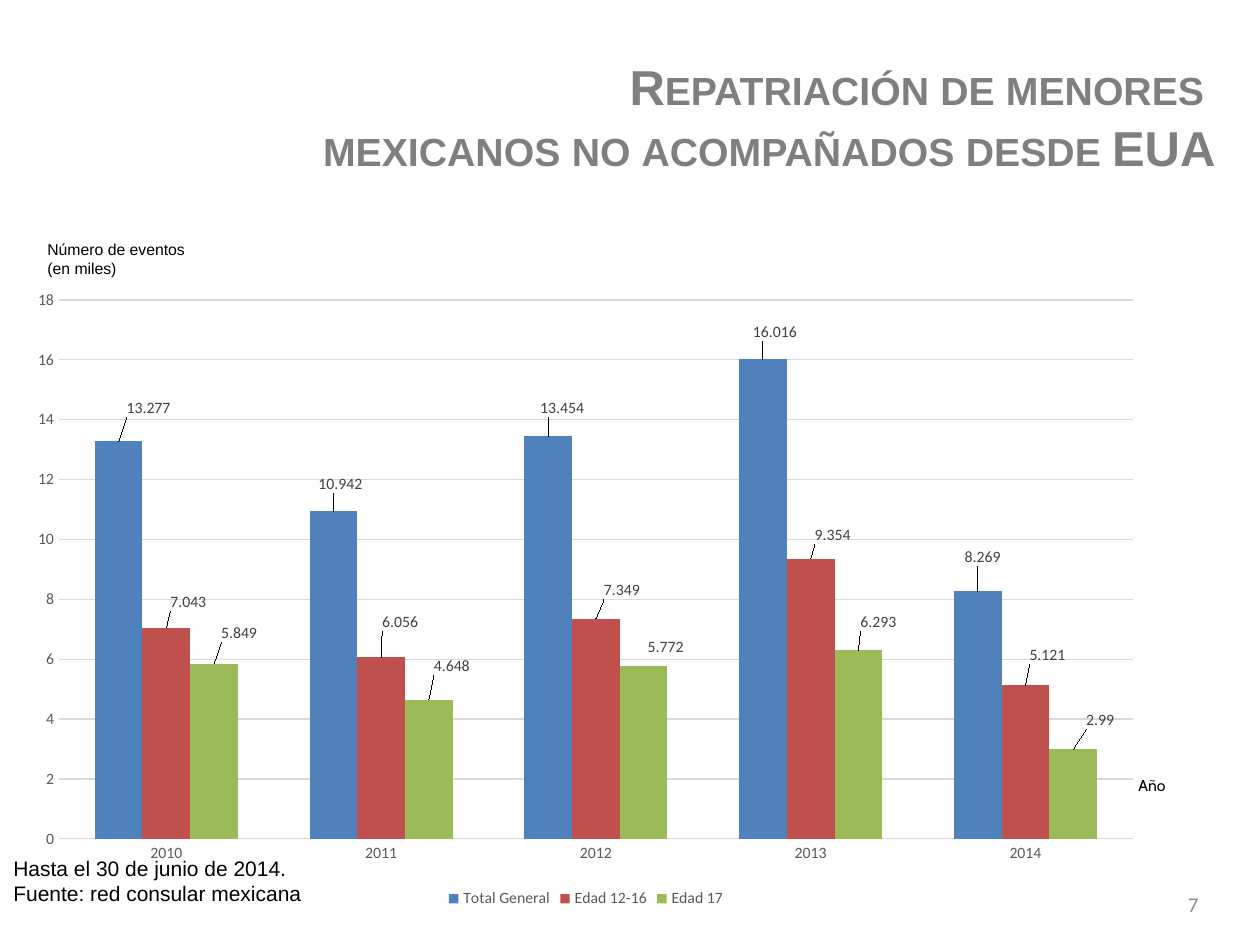
import pptx
import pptx.util
import pptx.chart.data
import pptx.dml.color
import pptx.enum.chart
import pptx.enum.text
import pptx.oxml
import pptx.oxml.ns

PX = 914400 // 126
RGB = pptx.dml.color.RGBColor
BLACK = RGB(0x00, 0x00, 0x00)
TITLE_GRAY = RGB(0x7F, 0x7F, 0x7F)
NUMBER_GRAY = RGB(0x8C, 0x8C, 0x8C)
AXIS_GRAY = RGB(0x59, 0x59, 0x59)
LABEL_GRAY = RGB(0x40, 0x40, 0x40)
GRID_GRAY = RGB(0xD9, 0xD9, 0xD9)
BLUE = RGB(0x4F, 0x81, 0xBD)
RED = RGB(0xC0, 0x50, 0x4D)
GREEN = RGB(0x9B, 0xBB, 0x59)
ALIGN = pptx.enum.text.PP_ALIGN
ANCHOR = pptx.enum.text.MSO_ANCHOR


def style(font, size, color, name="Calibri", bold=False):
    font.size = pptx.util.Pt(size)
    font.name = name
    font.bold = bold
    font.color.rgb = color


def write(shape, text, box, size, color=BLACK, name="Arial", bold=False, small_caps=False,
          align=ALIGN.LEFT, anchor=ANCHOR.TOP, wrap=False, spacing=None):
    shape.left, shape.top, shape.width, shape.height = [n * PX for n in box]
    frame = shape.text_frame
    frame.word_wrap = wrap
    frame.auto_size = pptx.enum.text.MSO_AUTO_SIZE.NONE
    frame.vertical_anchor = anchor
    frame.text = text
    for paragraph in frame.paragraphs:
        paragraph.alignment = align
        paragraph.line_spacing = spacing
        for run in paragraph.runs:
            style(run.font, size, color, name, bold)
            if small_caps:
                run.font._element.set("cap", "small")


presentation = pptx.Presentation()
presentation.slide_width = 1260 * PX
presentation.slide_height = 945 * PX
slide = presentation.slides.add_slide(presentation.slide_layouts[5])

# Title
write(slide.shapes.title, "Repatriación de menores \nmexicanos no acompañados desde EUA",
      (94, 47, 1134, 149), 28, TITLE_GRAY, bold=True, small_caps=True,
      align=ALIGN.RIGHT, wrap=True, spacing=1.05)

# Chart data, with the label shifts (right, up) in px for each year
series_rows = [
    ("Total General", BLUE, (13.277, 10.942, 13.454, 16.016, 8.269),
     ((30, 19), (7, 13), (14, 14), (12, 13), (5, 20))),
    ("Edad 12-16", RED, (7.043, 6.056, 7.349, 9.354, 5.121),
     ((22, 12), (19, 21), (26, 14), (22, 9), (22, 16))),
    ("Edad 17", GREEN, (5.849, 4.648, 5.772, 6.293, 2.99),
     ((25, 16), (23, 19), (22, 5), (20, 14), (27, 15))),
]
repatriations = pptx.chart.data.CategoryChartData()
repatriations.categories = ["2010", "2011", "2012", "2013", "2014"]
for name, color, values, shifts in series_rows:
    repatriations.add_series(name, values)

CHART_W, CHART_H = 1142, 635
chart = slide.shapes.add_chart(
    pptx.enum.chart.XL_CHART_TYPE.COLUMN_CLUSTERED,
    15 * PX, 278 * PX, CHART_W * PX, CHART_H * PX, repatriations).chart
chart.has_title = False
style(chart.font, 10, BLACK)
chart.has_legend = True
chart.legend.position = pptx.enum.chart.XL_LEGEND_POSITION.BOTTOM
chart.legend.include_in_layout = False
style(chart.legend.font, 9, AXIS_GRAY)

# Axes
for axis in (chart.category_axis, chart.value_axis):
    axis.major_tick_mark = pptx.enum.chart.XL_TICK_MARK.NONE
    axis.minor_tick_mark = pptx.enum.chart.XL_TICK_MARK.NONE
    axis.format.line.fill.background()
    style(axis.tick_labels.font, 9, AXIS_GRAY)
events = chart.value_axis
events.minimum_scale, events.maximum_scale, events.major_unit = 0, 18, 2
events.major_gridlines.format.line.color.rgb = GRID_GRAY
events.major_gridlines.format.line.width = pptx.util.Pt(0.75)

# Plot area inside the chart
layout_start = f'<c:layout {pptx.oxml.ns.nsdecls("c")}><c:manualLayout>'
layout_end = '</c:manualLayout></c:layout>'
plot_area = chart._chartSpace.chart.plotArea
for old in plot_area.findall(pptx.oxml.ns.qn("c:layout")):
    plot_area.remove(old)
plot_area.insert(0, pptx.oxml.parse_xml(
    layout_start + '<c:layoutTarget val="inner"/><c:xMode val="edge"/><c:yMode val="edge"/>'
    f'<c:x val="{44 / CHART_W}"/><c:y val="{22 / CHART_H}"/>'
    f'<c:w val="{1074 / CHART_W}"/><c:h val="{539 / CHART_H}"/>' + layout_end))

# Columns and their shifted labels
plot = chart.plots[0]
plot.gap_width = 150
plot.overlap = 0
plot.vary_by_categories = False
for series, (name, color, values, shifts) in zip(plot.series, series_rows):
    series.format.fill.solid()
    series.format.fill.fore_color.rgb = color
    series.invert_if_negative = False
    series.data_labels.show_value = True
    style(series.data_labels.font, 9, LABEL_GRAY)
    for year in range(len(values)):
        label = series.points[year].data_label
        style(label.font, 9, LABEL_GRAY)
        label.position = pptx.enum.chart.XL_LABEL_POSITION.OUTSIDE_END
    for element, (right, up) in zip(series._element.iter(pptx.oxml.ns.qn("c:dLbl")), shifts):
        element.insert(1, pptx.oxml.parse_xml(
            layout_start + f'<c:x val="{right / CHART_W}"/><c:y val="{-up / CHART_H}"/>'
            + layout_end))

# Axis captions, source and slide number
captions = [
    ("Número de eventos\n(en miles)", (35, 234, 164, 50), dict(size=9)),
    ("Año", (1126, 770, 55, 32), dict(size=9, name="Cabin")),
    ("Hasta el 30 de junio de 2014.\nFuente: red consular mexicana", (1, 849, 316, 63),
     dict(size=12)),
    ("7", (917, 879, 294, 50), dict(size=12, name="Calibri", color=NUMBER_GRAY,
                                    align=ALIGN.RIGHT, anchor=ANCHOR.MIDDLE, wrap=True)),
]
for text, box, look in captions:
    write(slide.shapes.add_textbox(0, 0, 0, 0), text, box, **look)

presentation.save("out.pptx")
